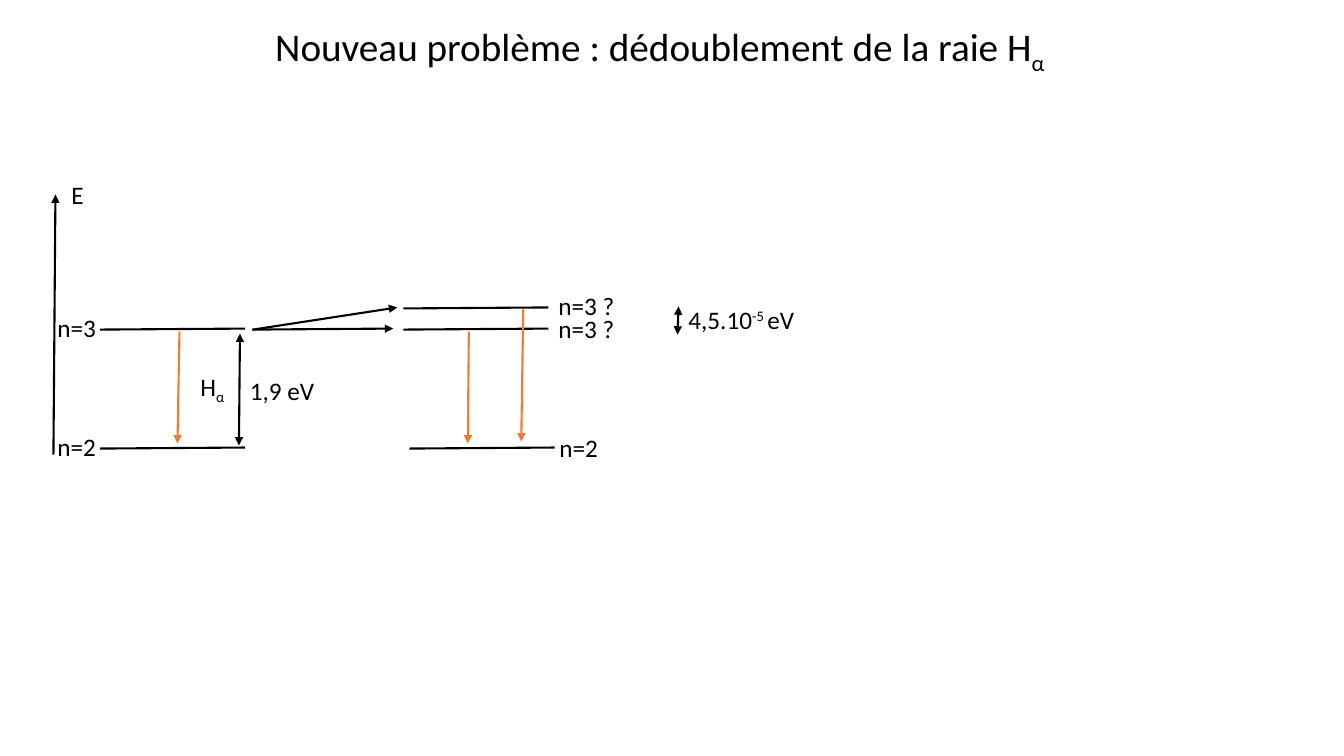
from lxml.etree import SubElement as Sub
from pptx import Presentation
from pptx.dml.color import RGBColor as RGB
from pptx.enum.shapes import MSO_CONNECTOR as Conn
from pptx.enum.text import MSO_ANCHOR as Anchor, MSO_AUTO_SIZE as Fit, PP_ALIGN as Align
from pptx.oxml.ns import qn
from pptx.util import Inches, Pt

BLACK = RGB(0, 0, 0)
ORANGE = RGB(0xED, 0x7D, 0x31)
FONT = "Calibri"


def write(shape, *parts, size=18, color=BLACK):
    frame = shape.text_frame
    frame.word_wrap = True
    frame.auto_size = Fit.NONE
    frame.vertical_anchor = Anchor.TOP
    para = frame.paragraphs[0]
    para.alignment = Align.LEFT
    para.line_spacing = 1.0
    for part in parts:
        text, shift = part if isinstance(part, tuple) else (part, 0)
        run = para.add_run()
        run.text = text
        run.font.size = Pt(size)
        run.font.name = FONT
        run.font.color.rgb = color
        if shift:
            run._r.get_or_add_rPr().set("baseline", str(shift * 1000))


def place(shape, left, top, width, height):
    shape.left, shape.top = Inches(left), Inches(top)
    shape.width, shape.height = Inches(width), Inches(height)


def label(slide, left, top, width, *parts):
    box = slide.shapes.add_textbox(
        Inches(left), Inches(top), Inches(width), Inches(0.4))
    write(box, *parts)


def line(slide, start, end, color=BLACK, ends=()):
    link = slide.shapes.add_connector(
        Conn.STRAIGHT, *(Inches(v) for v in (*start, *end)))
    link.line.color.rgb = color
    link.line.width = Pt(1.5)
    props = link._element.spPr
    stroke = props.find(qn("a:ln"))
    for tip in ends:
        Sub(stroke, qn(f"a:{tip}End"), type="triangle")
    Sub(props, qn("a:effectLst"))


def level(slide, left, top):
    line(slide, (left, top), (left + 1.44, top - 0.01))


def arrow(slide, start, end, color=BLACK):
    line(slide, start, end, color, ["tail"])


def gap(slide, start, end):
    line(slide, start, end, ends=["head", "tail"])


def main():
    deck = Presentation()
    deck.slide_width, deck.slide_height = Inches(13.33), Inches(7.5)
    slide = deck.slides.add_slide(deck.slide_layouts[5])

    title = slide.shapes.title
    place(title, 2.63, 0.17, 8.08, 0.57)
    write(title, "Nouveau problème : dédoublement de la raie H",
          ("α", -25), size=28)

    for left, top in [(0.99, 4.45), (0.99, 3.27), (4.06, 4.45),
                      (4, 3.27), (4, 3.06)]:
        level(slide, left, top)

    arrow(slide, (0.53, 4.51), (0.55, 1.93))
    arrow(slide, (2.51, 3.27), (3.94, 3.05))
    arrow(slide, (2.5, 3.27), (3.9, 3.26))
    arrow(slide, (1.78, 3.29), (1.76, 4.4), ORANGE)
    arrow(slide, (4.65, 3.29), (4.64, 4.4), ORANGE)
    arrow(slide, (5.19, 3.07), (5.17, 4.38), ORANGE)
    gap(slide, (6.73, 3.04), (6.72, 3.32))
    gap(slide, (2.38, 3.31), (2.37, 4.42))

    label(slide, 0.61, 1.73, 0.36, "E")
    label(slide, 0.47, 4.23, 0.71, "n=2")
    label(slide, 0.47, 3.05, 0.71, "n=3")
    label(slide, 5.45, 4.24, 0.64, "n=2")
    label(slide, 5.44, 2.83, 1.05, "n=3 ?")
    label(slide, 5.44, 3.06, 1.09, "n=3 ?")
    label(slide, 1.89, 3.63, 0.67, "H", ("α", -25))
    label(slide, 2.38, 3.67, 1.06, "1,9 eV")
    label(slide, 6.73, 2.97, 1.36, "4,5.10", ("-5 ", 30), "eV")

    deck.save("out.pptx")


if __name__ == "__main__":
    main()
